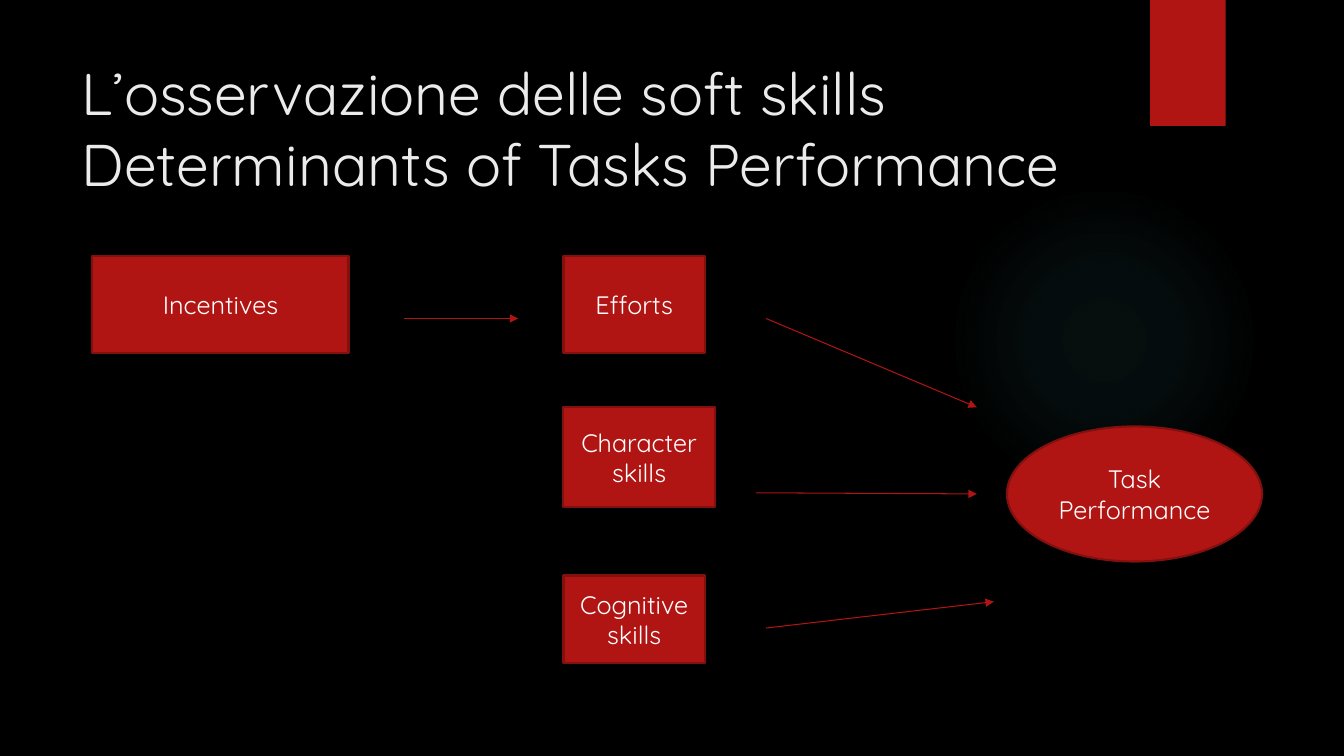
from lxml import etree
from pptx import Presentation
from pptx import util as u
from pptx.dml.color import RGBColor
from pptx.enum import shapes, text
from pptx.oxml import parse_xml
from pptx.oxml.ns import nsdecls, qn

RED, DARK_RED, WHITE, PALE = "B01513", "82100E", "FFFFFF", "EBEBEB"
RECTANGLE = shapes.MSO_SHAPE.RECTANGLE
OVAL = shapes.MSO_SHAPE.OVAL
GLOW_STOPS = ((0, 7), (36, 6), (69, 0))


def colour(value):
    return RGBColor.from_string(value)


def write(shape, words, size, ink, align):
    frame = shape.text_frame
    frame.word_wrap = True
    frame.vertical_anchor = text.MSO_ANCHOR.MIDDLE
    para = frame.paragraphs[0]
    para.text = words
    para.alignment = align
    for span in para.runs:
        for name, value in {"name": "Quicksand", "size": u.Pt(size)}.items():
            setattr(span.font, name, value)
        span.font.color.rgb = colour(ink)


def add_block(page, kind, place, outline=None):
    shape = page.shapes.add_shape(kind, *map(u.Pt, place))
    shape.shadow.inherit = False
    shape.fill.solid()
    shape.fill.fore_color.rgb = colour(RED)
    if outline:
        shape.line.color.rgb = colour(outline)
        shape.line.width = u.Pt(1.5)
    else:
        shape.line.fill.background()
    return shape


def add_node(page, words, place, kind=RECTANGLE):
    shape = add_block(page, kind, place, DARK_RED)
    write(shape, words, 18, WHITE, text.PP_ALIGN.CENTER)


def add_glow(page, place):
    glow = add_block(page, OVAL, place)
    stops = "".join(
        f'<a:gs pos="{position * 1000}"><a:srgbClr val="50B9C1">'
        f'<a:alpha val="{alpha * 1000}"/></a:srgbClr></a:gs>'
        for position, alpha in GLOW_STOPS)
    gradient = parse_xml(
        f'<a:gradFill {nsdecls("a")}><a:gsLst>{stops}</a:gsLst><a:path path="circle">'
        '<a:fillToRect l="50000" t="50000" r="50000" b="50000"/></a:path></a:gradFill>')
    properties = glow.element.spPr
    properties.replace(properties.find(qn("a:solidFill")), gradient)


def add_title(page, words, place):
    box = page.shapes.add_textbox(*map(u.Pt, place))
    write(box, words, 42, PALE, text.PP_ALIGN.LEFT)


def add_arrow(page, points):
    arrow = page.shapes.add_connector(shapes.MSO_CONNECTOR.STRAIGHT, *map(u.Pt, points))
    arrow.line.color.rgb = colour(RED)
    arrow.line.width = u.Pt(0.75)
    etree.SubElement(arrow.line._get_or_add_ln(), qn("a:tailEnd"), type="triangle")
    etree.SubElement(arrow.element.spPr, qn("a:effectLst"))


def main():
    deck = Presentation()
    deck.slide_width, deck.slide_height = u.Pt(960), u.Pt(540)
    page = deck.slides.add_slide(deck.slide_layouts[6])
    page.background.fill.solid()
    page.background.fill.fore_color.rgb = colour("000000")

    add_glow(page, (677.5, 131.8, 221.8, 221.8))
    add_block(page, RECTANGLE, (821.5, 0, 54, 90))
    add_title(page, "L’osservazione delle soft skills\vDeterminants of Tasks Performance",
              (51.1, 36, 740.9, 110.2))

    add_node(page, "Incentives", (66, 183, 183, 69))
    for words, top, width, height in (("Efforts", 183, 101, 69),
                                      ("Character skills", 290.9, 108, 71.3),
                                      ("Cognitive skills", 411.1, 101, 62.6)):
        add_node(page, words, (402.5, top, width, height))
    add_node(page, "Task Performance", (719.3, 304.6, 182.2, 96.5), OVAL)

    for points in ((288.7, 227.5, 370.1, 227.5),
                   (547.2, 227.5, 697.7, 290.9),
                   (540, 352, 697.7, 352.8),
                   (547.2, 448.6, 709.9, 429.8)):
        add_arrow(page, points)
    deck.save("out.pptx")


if __name__ == "__main__":
    main()
